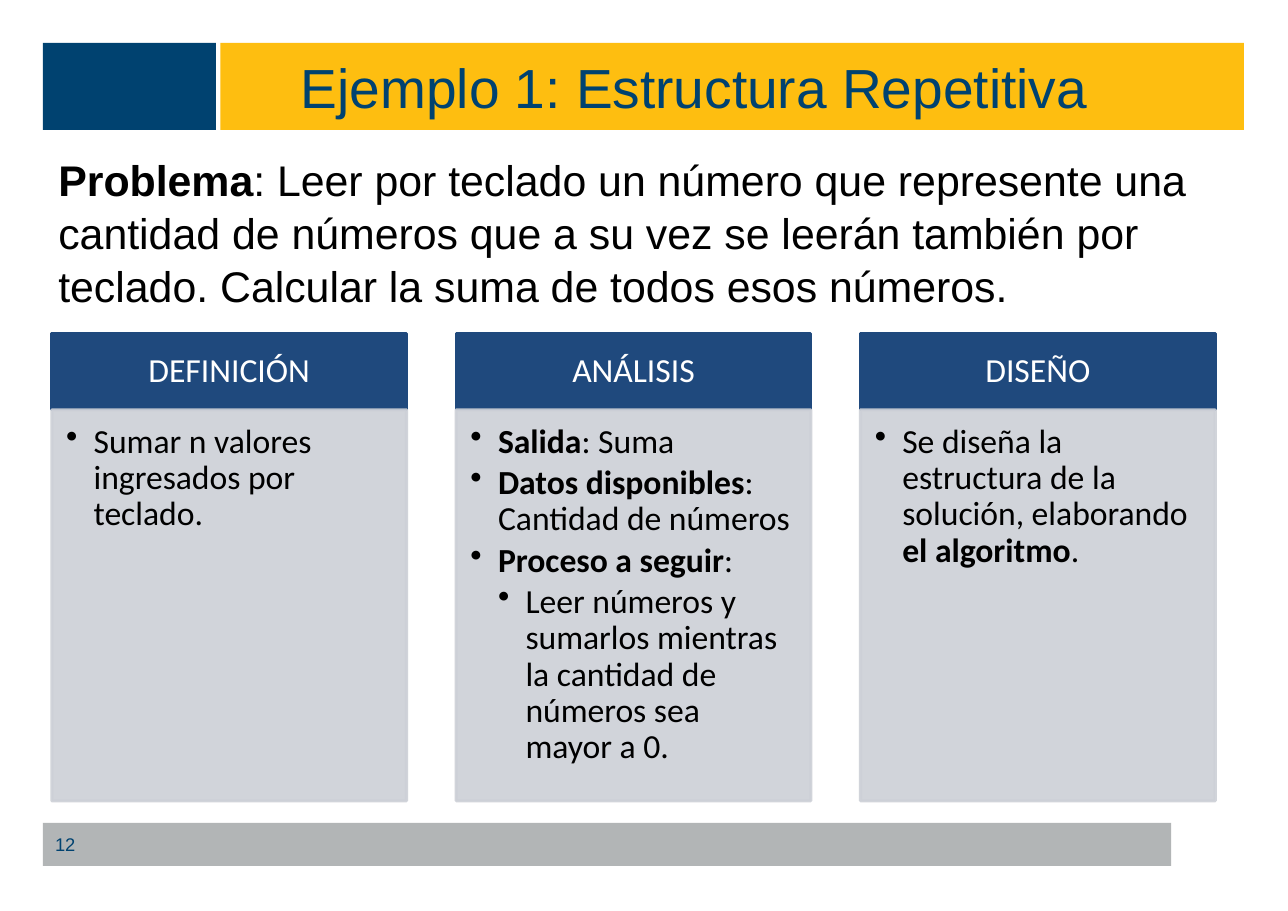
"""Build the slide that presents a repetitive structure example in three columns."""
from lxml.etree import SubElement
from pptx import Presentation
from pptx.dml.color import RGBColor
from pptx.enum.shapes import MSO_SHAPE as Shape
from pptx.enum.text import MSO_ANCHOR as Anchor, PP_ALIGN as Align
from pptx.oxml.ns import qn
from pptx.util import Inches, Pt

COLORS = {
    "navy": "004270", "yellow": "FEBE10", "gray": "B2B5B6", "blue": "1F497D",
    "panel": "CDD0D7", "black": "000000", "white": "FFFFFF",
}

presentation = Presentation()
presentation.slide_width = Inches(11.69)
presentation.slide_height = Inches(8.27)
slide = presentation.slides.add_slide(presentation.slide_layouts[6])


def add_rectangle(left, top, width, height, color, outlined=False, opacity=100):
    shape = slide.shapes.add_shape(
        Shape.RECTANGLE, Inches(left), Inches(top), Inches(width), Inches(height))
    shape.shadow.inherit = False
    fills = [shape.fill]
    if outlined:
        shape.line.width = Pt(2)
        fills.append(shape.line.fill)
    else:
        shape.line.fill.background()
    for fill in fills:
        fill.solid()
        fill.fore_color.rgb = RGBColor.from_string(COLORS[color])
    if opacity < 100:
        for color_element in shape.element.spPr.iter(qn("a:srgbClr")):
            SubElement(color_element, qn("a:alpha"), val=str(opacity * 1000))
    return shape


def write_text(shape, paragraphs, size, color, font="Arial", align=Align.LEFT,
               anchor=Anchor.MIDDLE, insets=(0.11, 0.05, 0.11, 0.05),
               spacing=1.0, after=0, bullets=False):
    frame = shape.text_frame
    frame.word_wrap = True
    frame.vertical_anchor = anchor
    frame.margin_left, frame.margin_top, frame.margin_right, frame.margin_bottom = map(Inches, insets)
    for index, (level, runs) in enumerate(paragraphs):
        paragraph = frame.paragraphs[0] if index == 0 else frame.add_paragraph()
        paragraph.alignment = align
        paragraph.line_spacing = spacing
        paragraph.space_after = Pt(after)
        if bullets:
            paragraph.level = level
            properties = paragraph._p.get_or_add_pPr()
            properties.set("marL", str(Inches(0.25 * level)))
            properties.set("indent", str(Inches(-0.25)))
            SubElement(properties, qn("a:buChar"), char="•")
        for text, bold in runs:
            run = paragraph.add_run()
            run.text = text
            run.font.name = font
            run.font.size = Pt(size)
            run.font.bold = bold
            run.font.color.rgb = RGBColor.from_string(COLORS[color])


add_rectangle(0.39, 7.47, 10.24, 0.39, "gray")
add_rectangle(0.39, 0.39, 1.57, 0.79, "navy")
add_rectangle(2, 0.39, 9.29, 0.79, "yellow")

title = slide.shapes.add_textbox(Inches(2.62), Inches(0.39), Inches(8.68), Inches(0.79))
write_text(title, [(0, [("Ejemplo 1: Estructura Repetitiva", False)])], 36, "navy")

page_number = slide.shapes.add_textbox(Inches(0.39), Inches(7.47), Inches(2.73), Inches(0.39))
write_text(page_number, [(0, [("12", False)])], 12, "navy")

problem = slide.shapes.add_textbox(Inches(0.42), Inches(1.33), Inches(10.9), Inches(1.6))
write_text(problem, [(0, [
    ("Problema", True),
    (": Leer por teclado un número que represente una cantidad de números que a su vez "
     "se leerán también por teclado. Calcular la suma de todos esos números.", False),
])], 28, "black", anchor=Anchor.TOP, spacing=1.03)

columns = [
    ("DEFINICIÓN", [(1, [("Sumar n valores ingresados por teclado.", False)])]),
    ("ANÁLISIS", [
        (1, [("Salida", True), (": Suma", False)]),
        (1, [("Datos disponibles", True), (": Cantidad de números", False)]),
        (1, [("Proceso a seguir", True), (":", False)]),
        (2, [("Leer números y sumarlos mientras la cantidad de números sea mayor a 0.", False)]),
    ]),
    ("DISEÑO", [(1, [
        ("Se diseña la estructura de la solución, elaborando ", False),
        ("el algoritmo", True), (".", False),
    ])]),
]
for index, (heading, points) in enumerate(columns):
    left = 0.47 + 3.67 * index
    header = add_rectangle(left, 3.03, 3.22, 0.69, "blue", outlined=True)
    write_text(header, [(0, [(heading, False)])], 22, "white", font="Calibri",
               align=Align.CENTER, insets=(0.17, 0.1, 0.17, 0.1), spacing=0.9)
    panel = add_rectangle(left, 3.72, 3.22, 3.55, "panel", outlined=True, opacity=90)
    write_text(panel, points, 22, "black", font="Calibri", anchor=Anchor.TOP,
               insets=(0.13, 0.13, 0.17, 0.19), spacing=0.9, after=3.3, bullets=True)

presentation.save("out.pptx")
